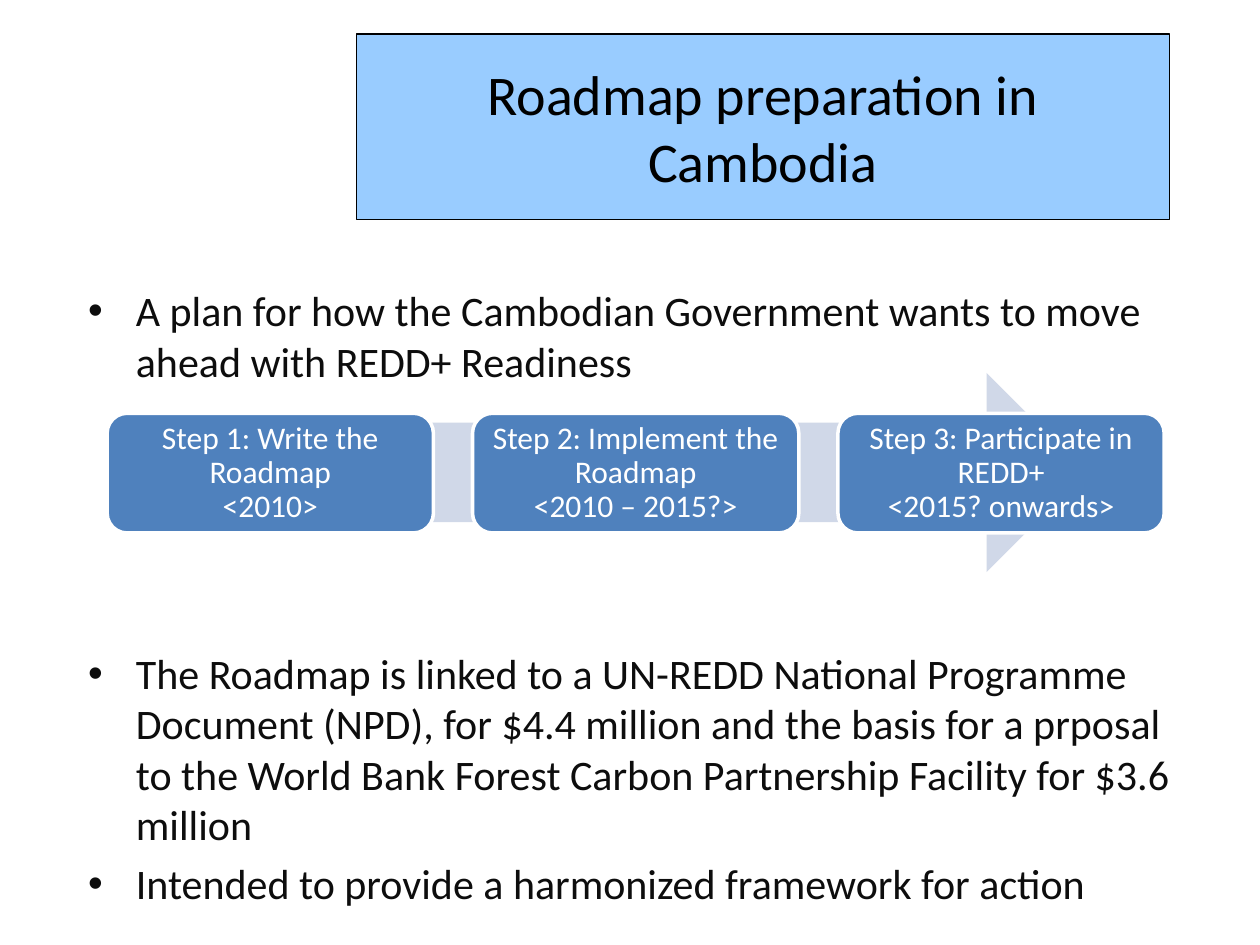
from dataclasses import dataclass

from lxml.etree import SubElement
from pptx import Presentation
from pptx.dml.color import RGBColor
from pptx.enum.shapes import MSO_SHAPE as Preset
from pptx.enum.text import MSO_ANCHOR as Anchor, PP_ALIGN as Align
from pptx.oxml.ns import qn
from pptx.util import Inches, Pt

COLUMNS, ROWS = 100, 75


@dataclass(frozen=True)
class Theme:
    font: str = "Calibri"
    black: str = "000000"
    ink: str = "0D0D0D"
    white: str = "FFFFFF"
    title_fill: str = "99CCFF"
    arrow_fill: str = "D0D8E8"
    step_fill: str = "4F81BD"
    title_size: float = 32
    body_size: float = 24
    step_size: float = 18


@dataclass(frozen=True)
class Area:
    column: float
    row: float
    columns: float
    rows: float


@dataclass(frozen=True)
class Step:
    task: str
    period: str


THEME = Theme()
TITLE = Area(28.3, 2.7, 64.5, 14.7)
PLAN = Area(6, 22.1, 89.8, 9)
LINKS = Area(6, 50.9, 89.8, 22)
ARROW = Area(14.8, 29.6, 71.4, 15.8)
FIRST_STEP = Area(8.5, 32.8, 25.9, 9.5)
STEP_PITCH = 29
STEPS = [
    Step("Step 1: Write the Roadmap", "<2010>"),
    Step("Step 2: Implement the Roadmap", "<2010 – 2015?>"),
    Step("Step 3: Participate in REDD+", "<2015? onwards>"),
]

deck = Presentation()
deck.slide_width, deck.slide_height = Inches(10), Inches(7.5)
page = deck.slides.add_slide(deck.slide_layouts[6])


def place(area: Area) -> tuple[int, int, int, int]:
    cell_width, cell_height = deck.slide_width / COLUMNS, deck.slide_height / ROWS
    return (round(area.column * cell_width), round(area.row * cell_height),
            round(area.columns * cell_width), round(area.rows * cell_height))


def add_bullet(para, indent: float) -> None:
    properties = para._p.get_or_add_pPr()
    properties.set("marL", str(Inches(indent)))
    properties.set("indent", str(-Inches(indent)))
    SubElement(properties, qn("a:buFont")).set("typeface", "Arial")
    SubElement(properties, qn("a:buChar")).set("char", "•")


def write(box, lines: list[str], *, size: float, color: str, align=Align.CENTER,
          anchor=Anchor.MIDDLE, spacing: float = 1, gap: float = 0,
          bullet: bool = False, inset: float | None = None) -> None:
    frame = box.text_frame
    frame.word_wrap = True
    frame.vertical_anchor = anchor
    if inset is not None:
        frame.margin_left = frame.margin_right = Inches(inset)
        frame.margin_top = frame.margin_bottom = Inches(inset)
    for number, line in enumerate(lines):
        para = frame.add_paragraph() if number else frame.paragraphs[0]
        para.alignment = align
        para.line_spacing = spacing
        para.space_before = Pt(gap if number else 0)
        if bullet:
            add_bullet(para, 0.38)
        span = para.add_run()
        span.text = line
        span.font.name = THEME.font
        span.font.size = Pt(size)
        span.font.color.rgb = RGBColor.from_string(color)


def add_block(preset: Preset, area: Area, fill: str, line: str | None = None,
              weight: float = 0):
    block = page.shapes.add_shape(preset, *place(area))
    block.shadow.inherit = False
    block.fill.solid()
    block.fill.fore_color.rgb = RGBColor.from_string(fill)
    if line:
        block.line.color.rgb = RGBColor.from_string(line)
        block.line.width = Pt(weight)
    else:
        block.line.fill.background()
    return block


def add_bullets(area: Area, lines: list[str]) -> None:
    write(page.shapes.add_textbox(*place(area)), lines, size=THEME.body_size,
          color=THEME.ink, align=Align.LEFT, anchor=Anchor.TOP, gap=4.8, bullet=True)


def add_step(number: int, step: Step) -> None:
    area = Area(FIRST_STEP.column + number * STEP_PITCH, FIRST_STEP.row,
                FIRST_STEP.columns, FIRST_STEP.rows)
    block = add_block(Preset.ROUNDED_RECTANGLE, area, THEME.step_fill, THEME.white, 2)
    write(block, [step.task, step.period], size=THEME.step_size, color=THEME.white,
          spacing=0.9, inset=0.03)


title = add_block(Preset.RECTANGLE, TITLE, THEME.title_fill, THEME.black, 0.75)
write(title, ["Roadmap preparation in Cambodia"], size=THEME.title_size, color=THEME.black)

add_bullets(PLAN, ["A plan for how the Cambodian Government wants to move ahead "
                   "with REDD+ Readiness"])
add_bullets(LINKS, [
    "The Roadmap is linked to a UN-REDD National Programme Document (NPD), "
    "for $4.4 million and the basis for a prposal to the World Bank Forest "
    "Carbon Partnership Facility for $3.6 million",
    "Intended to provide a harmonized framework for action",
])

add_block(Preset.RIGHT_ARROW, ARROW, THEME.arrow_fill)
for number, step in enumerate(STEPS):
    add_step(number, step)

deck.save("out.pptx")
